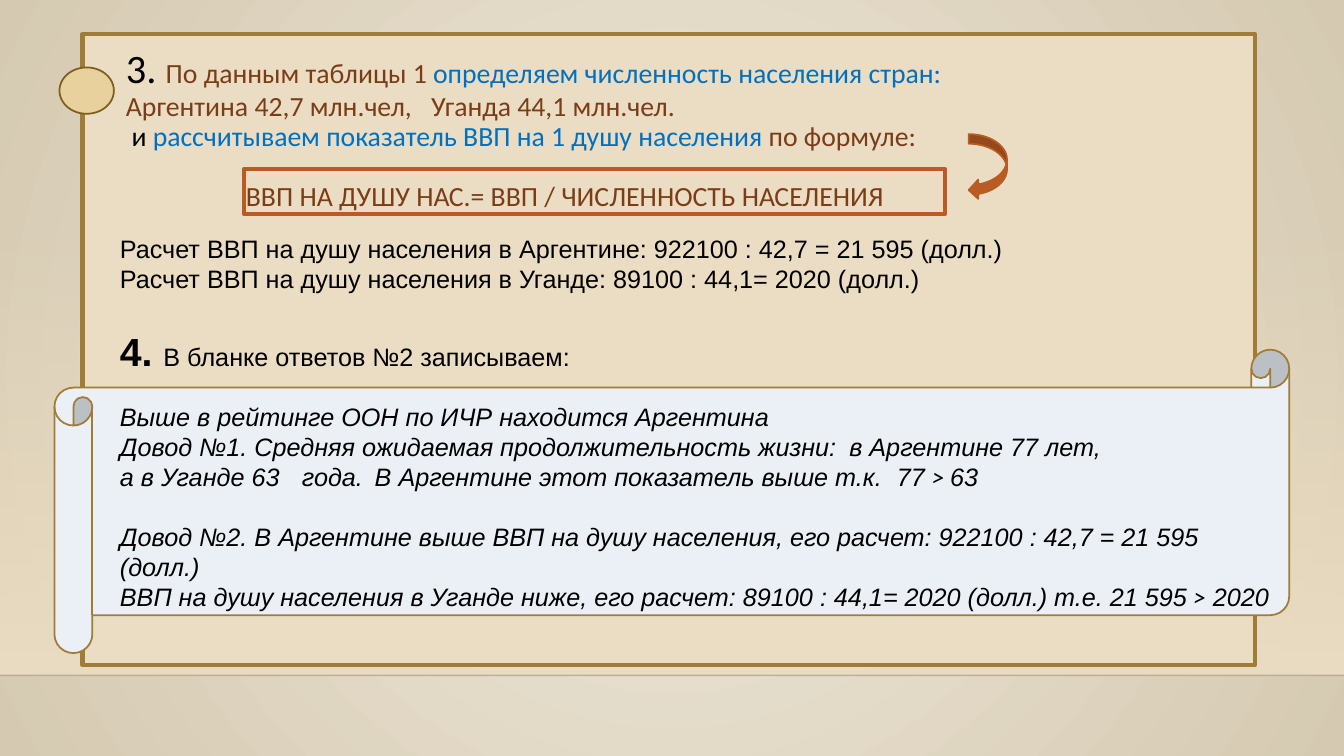
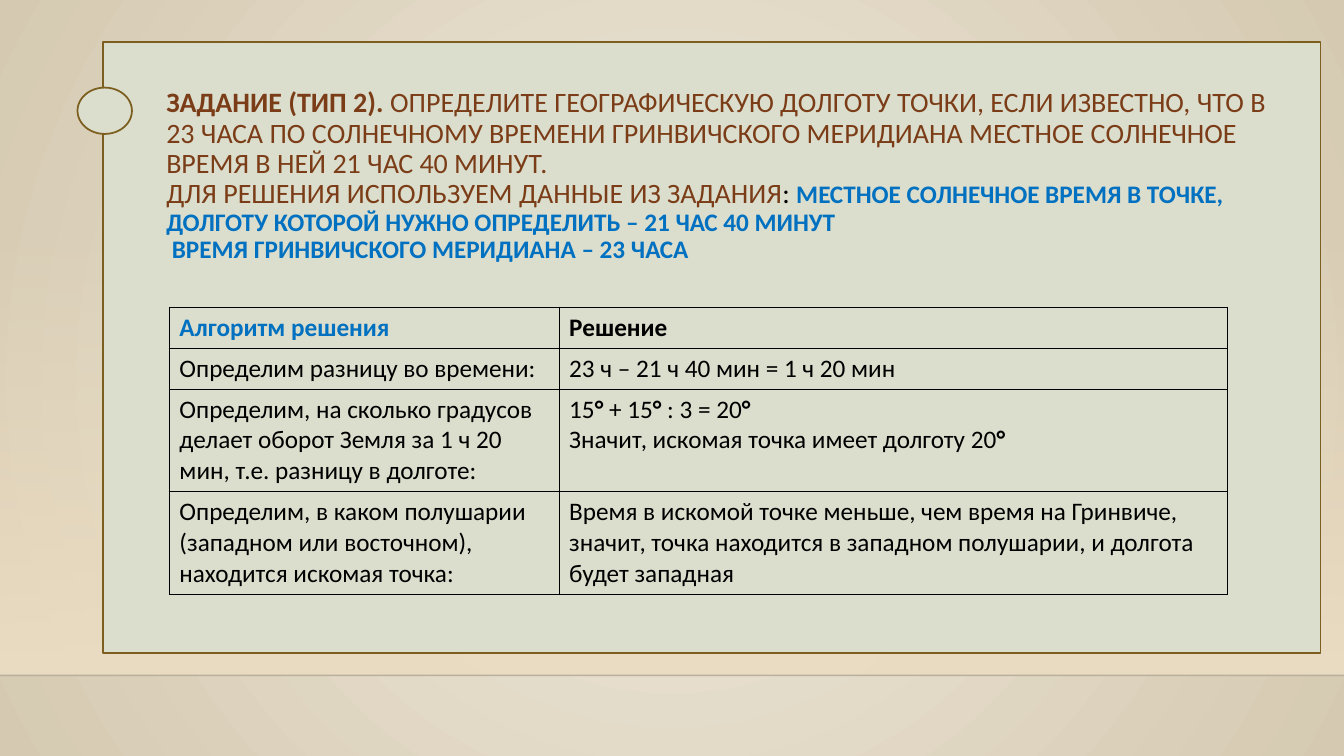
from lxml.etree import SubElement
from pptx import Presentation
from pptx.dml.color import RGBColor
from pptx.enum.shapes import MSO_CONNECTOR, MSO_SHAPE
from pptx.enum.text import MSO_ANCHOR, PP_ALIGN
from pptx.oxml import parse_xml
from pptx.oxml.ns import nsdecls, qn
from pptx.util import Pt

BLACK = RGBColor(0x00, 0x00, 0x00)
RULE = RGBColor(0x00, 0x00, 0x01)
RUST = RGBColor(0x7B, 0x3D, 0x17)
BLUE = RGBColor(0x00, 0x70, 0xC0)
ORANGE = RGBColor(0xB9, 0x5B, 0x22)
SAND = RGBColor(0xEB, 0xDD, 0xC3)
IVORY = RGBColor(0xF0, 0xEA, 0xDD)
STONE = RGBColor(0xD5, 0xC9, 0xB1)
GOLD = RGBColor(0xA1, 0x7C, 0x36)
BROWN = RGBColor(0x7C, 0x5F, 0x1E)
HONEY = RGBColor(0xE8, 0xD1, 0x9D)
SAGE = RGBColor(0xDB, 0xDD, 0xCD)
MIST = RGBColor(0xEA, 0xF0, 0xF6)
WIDE, HIGH = 960, 540
FLOOR = 482.4


def draw(slide, kind, box, fill, line, width=1.25):
    shape = slide.shapes.add_shape(kind, *map(Pt, box))
    shape.shadow.inherit = False
    if fill is None:
        shape.fill.background()
    else:
        shape.fill.solid()
        shape.fill.fore_color.rgb = fill
    if line is None:
        shape.line.fill.background()
    else:
        shape.line.color.rgb = line
        shape.line.width = Pt(width)
    return shape


def write(frame, lines, tabs=(), **base):
    """Fill a frame; a line is a list of runs, a run is a text or (text, style)."""
    for i, line in enumerate(lines):
        par = frame.paragraphs[0] if i == 0 else frame.add_paragraph()
        par.alignment = PP_ALIGN.LEFT
        if tabs:
            stops = SubElement(par._p.get_or_add_pPr(), qn("a:tabLst"))
            for stop in tabs:
                SubElement(stops, qn("a:tab"), pos=str(Pt(stop)), algn="l")
        styles = [(par.font, base)]
        for item in line:
            text, style = (item, {}) if isinstance(item, str) else item
            run = par.add_run()
            run.text = text
            if style:
                styles.append((run.font, style))
        for font, style in styles:
            for key, val in style.items():
                if key == "ink":
                    font.color.rgb = val
                else:
                    setattr(font, key, val)


deck = Presentation()
deck.slide_width, deck.slide_height = Pt(WIDE), Pt(HIGH)

# Shared backdrop
back = deck.slide_master.background.fill
back.gradient()
for stop, color in zip(back.gradient_stops, (IVORY, STONE)):
    stop.color.rgb = color
grad = deck.slide_master._element.find(".//" + qn("a:gradFill"))
grad.remove(grad.find(qn("a:lin")))
grad.append(parse_xml(
    f'<a:path {nsdecls("a")} path="circle">'
    '<a:fillToRect l="50000" t="50000" r="50000" b="50000"/></a:path>'))

slides = []
for _ in range(2):
    slide = deck.slides.add_slide(deck.slide_layouts[6])
    band = draw(slide, MSO_SHAPE.RECTANGLE, (0, 159, WIDE, FLOOR - 159), SAND, None)
    band.fill.gradient()
    band.fill.gradient_angle = 270
    for stop in band.fill.gradient_stops:
        stop.color.rgb = SAND
    clear = band._element.find(".//" + qn("a:srgbClr"))
    SubElement(clear, qn("a:alpha"), val="0")
    rule = slide.shapes.add_connector(
        MSO_CONNECTOR.STRAIGHT, Pt(0), Pt(FLOOR), Pt(WIDE), Pt(FLOOR))
    rule.line.color.rgb = RULE
    rule.line.width = Pt(1)
    SubElement(rule._element.find(".//" + qn("a:srgbClr")), qn("a:alpha"), val="20000")
    SubElement(rule._element.spPr, qn("a:effectLst"))
    slides.append(slide)
first, second = slides

# Panels and knobs
draw(first, MSO_SHAPE.RECTANGLE, (59, 24.5, 837.4, 450.7), SAND, GOLD, 3)
draw(first, MSO_SHAPE.HORIZONTAL_SCROLL, (38.9, 249.8, 882, 216.7), MIST, GOLD)
draw(second, MSO_SHAPE.RECTANGLE, (73.4, 30.2, 869.8, 436.3), SAGE, BROWN)
draw(first, MSO_SHAPE.OVAL, (42.5, 48.2, 38.9, 33.1), HONEY, BROWN)
draw(second, MSO_SHAPE.OVAL, (55.4, 62.6, 38.9, 33.1), SAGE, BROWN)
draw(first, MSO_SHAPE.CURVED_LEFT_ARROW, (691.9, 95.8, 27.4, 46.8), ORANGE, ORANGE)
formula = draw(first, MSO_SHAPE.RECTANGLE, (174.2, 121, 501.1, 31.7), None, ORANGE, 3)

frames = []
for slide, box in (
    (first, (90, 35, 775, 78)),
    (first, (85.7, 166.6, 829.3, 100)),
    (first, (85.7, 286.6, 829.3, 151)),
    (second, (118.8, 63.4, 800, 130)),
):
    frames.append(slide.shapes.add_textbox(*map(Pt, box)).text_frame)
for frame in frames + [formula.text_frame]:
    frame.margin_left = frame.margin_right = 0
    frame.margin_top = frame.margin_bottom = 0
    frame.word_wrap = True
step, sums, reply, task = frames

# First slide
blue, black = {"ink": BLUE}, {"ink": BLACK}
write(step, [
    [("3. ", {"size": Pt(28.8), "ink": BLACK}), "По данным таблицы 1 ",
     ("определяем численность населения стран:", blue)],
    ["Аргентина 42,7 млн.чел,\tУганда 44,1 млн.чел."],
    [("и ", black), ("рассчитываем показатель ВВП на 1 душу населения ", blue),
     "по формуле:"],
], tabs=[218], size=Pt(19.8), name="Calibri", ink=RUST)

frame = formula.text_frame
frame.margin_left = frame.margin_bottom = Pt(1.5)
frame.vertical_anchor = MSO_ANCHOR.BOTTOM
write(frame, [["ВВП НА ДУШУ НАС.= ВВП / ЧИСЛЕННОСТЬ НАСЕЛЕНИЯ"]],
      size=Pt(19.8), name="Calibri", ink=RUST)

write(sums, [
    ["Расчет ВВП на душу населения в Аргентине: 922100 : 42,7 = 21 595 (долл.)"],
    ["Расчет ВВП на душу населения в Уганде: 89100 : 44,1= 2020 (долл.)"],
    [("4. ", {"size": Pt(28), "bold": True}), "В бланке ответов №2 записываем:"],
], size=Pt(18), name="Arial", ink=BLACK)

sign = {"name": "Calibri"}
write(reply, [
    ["Выше в рейтинге ООН по ИЧР находится Аргентина"],
    ["Довод №1. Средняя ожидаемая продолжительность жизни:\tв Аргентине 77 лет,"],
    ["а в Уганде 63\tгода.\tВ Аргентине этот показатель выше т.к.\t77 ",
     ("> ", sign), "63"],
    ["Довод №2. В Аргентине выше ВВП на душу населения, его расчет: "
     "922100 : 42,7 = 21 595 (долл.)"],
    ["ВВП на душу населения в Уганде ниже, его расчет: "
     "89100 : 44,1= 2020 (долл.) т.е. 21 595", (" >", sign), " 2020"],
], tabs=[130, 182, 521, 555], size=Pt(18), name="Arial", ink=BLACK, italic=True)

# Second slide
bold = {"bold": True}
given = {"size": Pt(18), "ink": BLUE, "bold": True}
write(task, [
    [("ЗАДАНИЕ (ТИП 2).", bold),
     " ОПРЕДЕЛИТЕ ГЕОГРАФИЧЕСКУЮ ДОЛГОТУ ТОЧКИ, ЕСЛИ ИЗВЕСТНО, ЧТО В 23 ЧАСА "
     "ПО СОЛНЕЧНОМУ ВРЕМЕНИ ГРИНВИЧСКОГО МЕРИДИАНА МЕСТНОЕ СОЛНЕЧНОЕ ВРЕМЯ "
     "В НЕЙ 21 ЧАС 40 МИНУТ."],
    ["ДЛЯ РЕШЕНИЯ ИСПОЛЬЗУЕМ ДАННЫЕ ИЗ ЗАДАНИЯ", (": ", black),
     ("МЕСТНОЕ СОЛНЕЧНОЕ ВРЕМЯ В ТОЧКЕ, ДОЛГОТУ КОТОРОЙ НУЖНО ОПРЕДЕЛИТЬ "
      "– 21 ЧАС 40 МИНУТ", given)],
    [("ВРЕМЯ ГРИНВИЧСКОГО МЕРИДИАНА – 23 ЧАСА", given)],
], size=Pt(20), name="Calibri", ink=RUST)

# Spacing: tight titles, even body lines, indented last title line
for frame in (step, task):
    for par in frame.paragraphs:
        par.line_spacing = 0.9
    frame.paragraphs[-1]._p.get_or_add_pPr().set("marL", str(Pt(4)))
for par in [*sums.paragraphs[:2], *reply.paragraphs]:
    par.line_spacing = Pt(21.5)
sums.paragraphs[2].space_before = Pt(24)
reply.paragraphs[3].space_before = Pt(21.5)

deg = ("°", bold)
rows = [
    ([[("Алгоритм решения", {"ink": BLUE, "bold": True})]], [[("Решение", bold)]]),
    ([["Определим разницу во времени:"]], [["23 ч – 21 ч 40 мин = 1 ч 20 мин"]]),
    ([["Определим, на сколько градусов делает оборот Земля за 1 ч 20 мин, "
       "т.е. разницу в долготе:"]],
     [["15", deg, " + 15", deg, " : 3 = 20", deg],
      ["Значит, искомая точка имеет долготу 20", deg]]),
    ([["Определим, в каком полушарии (западном или восточном), "
       "находится искомая точка:"]],
     [["Время в искомой точке меньше, чем время на Гринвиче, значит, точка "
       "находится в западном полушарии, и долгота будет западная"]]),
]
widths, heights = (278.4, 477.6), (29.2, 29.2, 73.2, 73.2)
table = second.shapes.add_table(
    len(rows), 2, Pt(121), Pt(219.6), Pt(sum(widths)), Pt(sum(heights))).table
table.first_row = table.horz_banding = False
for col, width in zip(table.columns, widths):
    col.width = Pt(width)
for r, (row, height) in enumerate(zip(rows, heights)):
    table.rows[r].height = Pt(height)
    for c, lines in enumerate(row):
        cell = table.cell(r, c)
        cell.fill.background()
        write(cell.text_frame, lines, size=Pt(18), name="Calibri", ink=BLACK)
        for i, side in enumerate("LRTB"):
            cell._tc.get_or_add_tcPr().insert(i, parse_xml(
                f'<a:ln{side} {nsdecls("a")} w="{Pt(1)}"><a:solidFill>'
                f'<a:srgbClr val="{BLACK}"/></a:solidFill></a:ln{side}>'))

deck.save("out.pptx")
